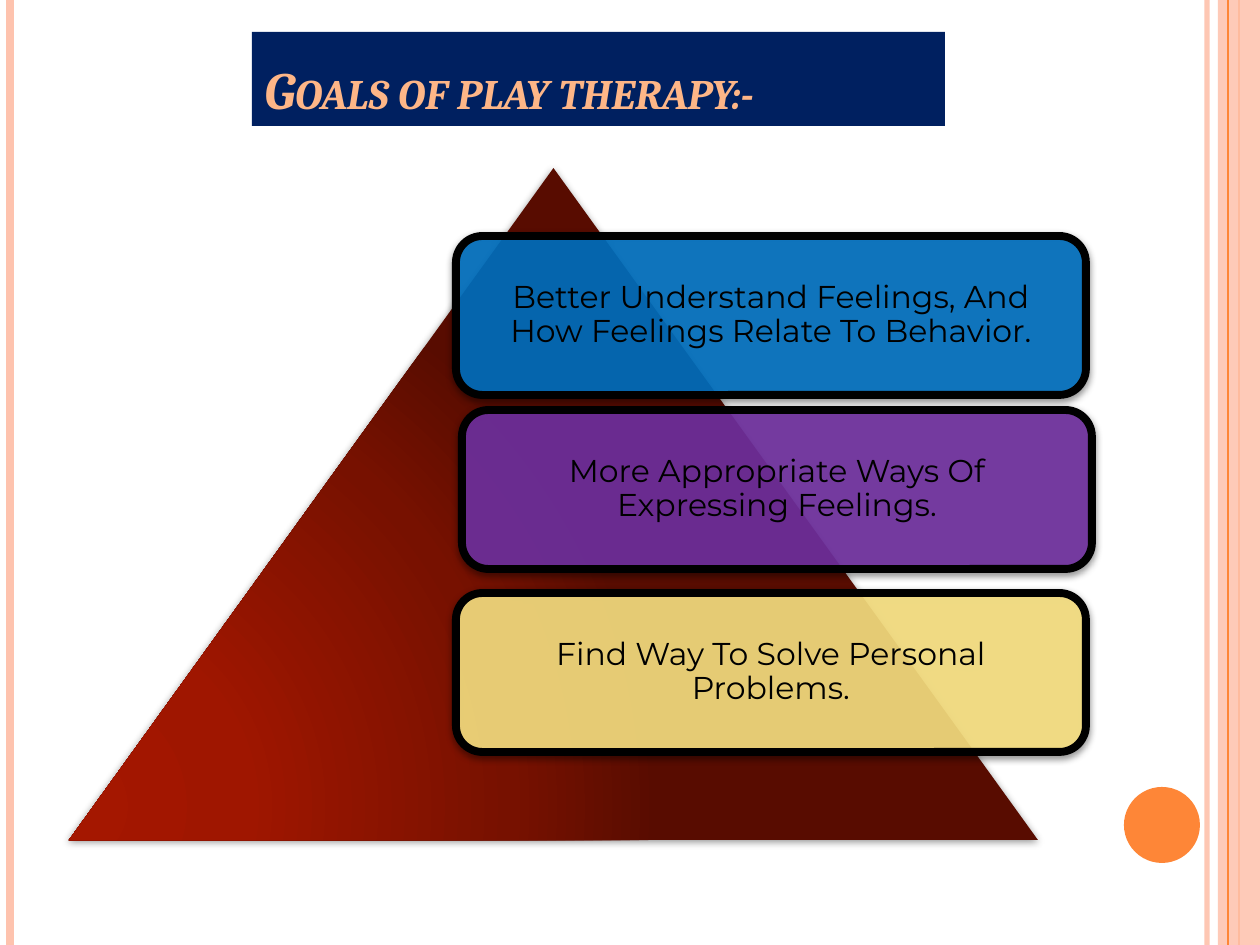
from lxml import etree
from pptx import Presentation
from pptx.dml.color import RGBColor
from pptx.enum.shapes import MSO_CONNECTOR, MSO_SHAPE
from pptx.enum.text import MSO_ANCHOR, PP_ALIGN
from pptx.oxml.ns import qn
from pptx.util import Emu, Pt

RECTANGLE = MSO_SHAPE.RECTANGLE
OVAL = MSO_SHAPE.OVAL
TRIANGLE = MSO_SHAPE.ISOSCELES_TRIANGLE
ROUNDED = MSO_SHAPE.ROUNDED_RECTANGLE
STRAIGHT = MSO_CONNECTOR.STRAIGHT
LEFT, CENTER = PP_ALIGN.LEFT, PP_ALIGN.CENTER
MIDDLE, BOTTOM = MSO_ANCHOR.MIDDLE, MSO_ANCHOR.BOTTOM

EMU_PER_PX = 914400 / 126
PAGE_WIDTH, PAGE_HEIGHT = 1260, 945

COLORS = {
    "peach": "FEC3AE",
    "orange": "FE8637",
    "navy": "002060",
    "title": "FEB687",
    "blue": "0070C0",
    "purple": "7030A0",
    "yellow": "F9E181",
    "black": "000000",
}
PYRAMID_STOPS = [(0, "A41700"), (30, "9F1600"), (75, "771100"), (100, "580C00")]
RAILS = [
    (1207, "peach", 3, 93),
    (10, "peach", 4.5, 100),
    (1239, "orange", 1.5, 100),
]
GOALS = [
    (456, 236, "blue", "Better Understand Feelings, And How Feelings Relate To Behavior."),
    (462, 410, "purple", "More Appropriate Ways Of Expressing Feelings."),
    (456, 593, "yellow", "Find Way To Solve Personal Problems."),
]


def px(length):
    return Emu(round(length * EMU_PER_PX))


def rgb(name):
    return RGBColor.from_string(COLORS[name])


def add_xml(parent, tag, **attributes):
    return etree.SubElement(
        parent, qn(tag), {key: str(value) for key, value in attributes.items()}
    )


def set_alpha(fill_parent, percent):
    if percent < 100:
        color = next(fill_parent.iter(qn("a:srgbClr")))
        add_xml(color, "a:alpha", val=percent * 1000)


def add_rail(page, x, color, width, alpha=100):
    rail = page.shapes.add_connector(STRAIGHT, px(x), 0, px(x), px(PAGE_HEIGHT))
    rail.line.color.rgb = rgb(color)
    rail.line.width = Pt(width)
    set_alpha(rail._element.spPr.find(qn("a:ln")), alpha)
    add_xml(rail._element.spPr, "a:effectLst")


def add_block(page, kind, left, top, width, height, fill=None, alpha=100, border=0):
    block = page.shapes.add_shape(kind, px(left), px(top), px(width), px(height))
    block.shadow.inherit = False
    if fill:
        block.fill.solid()
        block.fill.fore_color.rgb = rgb(fill)
        set_alpha(block._element.spPr.find(qn("a:solidFill")), alpha)
    if border:
        block.line.color.rgb = rgb("black")
        block.line.width = Pt(border)
    else:
        block.line.fill.background()
    return block


def add_shadow(block):
    effects = block._element.spPr.find(qn("a:effectLst"))
    shadow = add_xml(effects, "a:outerShdw", blurRad=Pt(4), dist=Pt(1.6),
                     dir=5400000, rotWithShape=0)
    color = add_xml(shadow, "a:srgbClr", val=COLORS["black"])
    add_xml(color, "a:alpha", val=42000)


def set_radial_gradient(block, stops):
    block.fill.gradient()
    gradient = block._element.spPr.find(qn("a:gradFill"))
    for child in list(gradient):
        gradient.remove(child)
    stop_list = add_xml(gradient, "a:gsLst")
    for position, color in stops:
        stop = add_xml(stop_list, "a:gs", pos=position * 1000)
        add_xml(stop, "a:srgbClr", val=color)
    circle = add_xml(gradient, "a:path", path="circle")
    add_xml(circle, "a:fillToRect", l=5000, t=100000, r=120000, b=10000)


def write_text(box, text, font="Montserrat", size=18, color="black", align=CENTER,
               anchor=MIDDLE, spacing=None, inset=None, emphasis=False, small_caps=False):
    frame = box.text_frame
    frame.word_wrap = True
    frame.vertical_anchor = anchor
    if inset is not None:
        frame.margin_left = frame.margin_right = px(inset)
        frame.margin_top = frame.margin_bottom = px(inset)
    para = frame.paragraphs[0]
    para.alignment = align
    if spacing:
        para.line_spacing = spacing
    span = para.add_run()
    span.text = text
    span.font.name = font
    span.font.size = Pt(size)
    span.font.bold = span.font.italic = emphasis
    span.font.color.rgb = rgb(color)
    if small_caps:
        span.font._element.set("cap", "small")


def add_frame(page):
    for rail in RAILS:
        add_rail(page, *rail)
    add_block(page, RECTANGLE, 1218, 0, 42, PAGE_HEIGHT, "peach", alpha=87)
    add_rail(page, 1228, "orange", 0.75)
    add_block(page, OVAL, 1124, 787, 76, 76, "orange")


def add_title(page, text):
    banner = add_block(page, RECTANGLE, 252, 32, 693, 94, "navy")
    write_text(banner, text, font="Cambria", size=30, color="title", align=LEFT,
               anchor=BOTTOM, emphasis=True, small_caps=True)


def add_pyramid(page):
    pyramid = add_block(page, TRIANGLE, 69, 168, 969, 672)
    set_radial_gradient(pyramid, PYRAMID_STOPS)
    add_shadow(pyramid)


def add_goal(page, left, top, color, text):
    card = add_block(page, ROUNDED, left, top, 630, 159, color, alpha=90, border=4.5)
    add_shadow(card)
    write_text(card, text, spacing=0.9, inset=18)


def main():
    deck = Presentation()
    deck.slide_width, deck.slide_height = px(PAGE_WIDTH), px(PAGE_HEIGHT)
    page = deck.slides.add_slide(deck.slide_layouts[6])
    add_frame(page)
    add_title(page, "Goals of play therapy:-")
    add_pyramid(page)
    for goal in GOALS:
        add_goal(page, *goal)
    deck.save("out.pptx")


if __name__ == "__main__":
    main()
